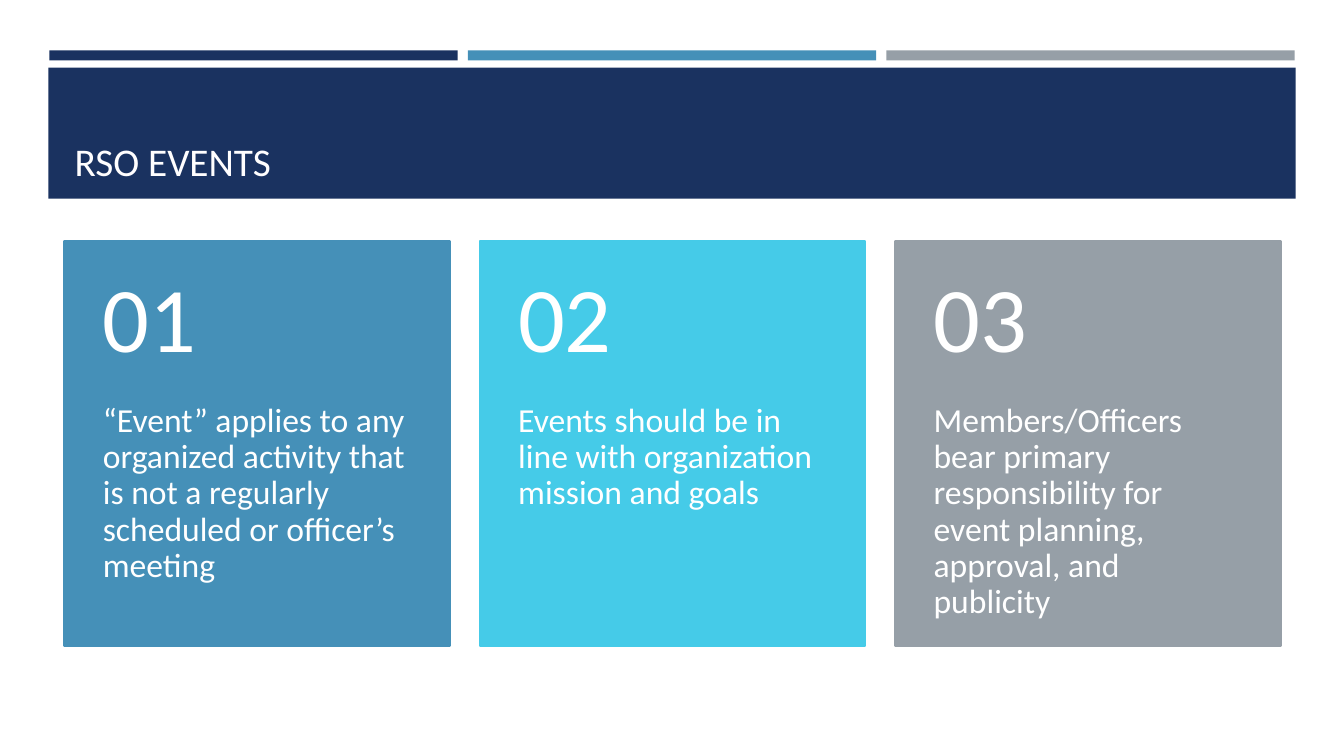
from pptx import Presentation
from pptx.dml.color import RGBColor
from pptx.enum.shapes import MSO_SHAPE
from pptx.enum.text import MSO_ANCHOR, PP_ALIGN
from pptx.util import Pt

RECT = MSO_SHAPE.RECTANGLE
TOP, MIDDLE, BOTTOM = MSO_ANCHOR.TOP, MSO_ANCHOR.MIDDLE, MSO_ANCHOR.BOTTOM
LEFT = PP_ALIGN.LEFT

NAVY = RGBColor(0x1A, 0x32, 0x60)
BLUE = RGBColor(0x45, 0x90, 0xB8)
CYAN = RGBColor(0x45, 0xCB, 0xE8)
GRAY = RGBColor(0x96, 0x9F, 0xA7)
WHITE = RGBColor(0xFF, 0xFF, 0xFF)
TITLE_WHITE = RGBColor(0xFF, 0xFE, 0xFF)
FONT = "Calibri"

TITLE = "RSO EVENTS"
STRIPES = [NAVY, BLUE, GRAY]
CARDS = [
    ("01", "“Event” applies to any organized activity that is not a regularly "
           "scheduled or officer’s meeting", BLUE),
    ("02", "Events should be in line with organization mission and goals", CYAN),
    ("03", "Members/Officers bear primary responsibility for event planning, "
           "approval, and publicity", GRAY),
]

PX = 9144  # EMU per px, 100 px to the inch
SLIDE_W, SLIDE_H = 1333, 750
STRIPE_X, STRIPE_Y, STRIPE_W, STRIPE_H, STRIPE_STEP = 49, 50, 405, 10, 415
BANNER = (48, 67, 1237, 130)
TITLE_BOX = (64, 77, 1206, 111)
CARD_X, CARD_Y, CARD_W, CARD_H, CARD_STEP = 64, 239, 382, 402, 412
NUMBER_H = 161
NUMBER_INSETS = (38, 18, 38, 18)
BODY_INSETS = (38, 0, 38, 36)


def emu(values):
    return [v * PX for v in values]


def add_rect(s, box, color, line_width=None):
    sp = s.shapes.add_shape(RECT, *emu(box))
    sp.shadow.inherit = False
    sp.fill.solid()
    sp.fill.fore_color.rgb = color
    if line_width:
        sp.line.color.rgb = color
        sp.line.width = Pt(line_width)
    else:
        sp.line.fill.background()


def set_text(sp, text, size, color=WHITE, anchor=TOP, insets=(10, 5, 10, 5),
             spacing=0.9):
    tf = sp.text_frame
    tf.word_wrap = True
    tf.vertical_anchor = anchor
    (tf.margin_left, tf.margin_top,
     tf.margin_right, tf.margin_bottom) = emu(insets)
    p = tf.paragraphs[0]
    p.alignment = LEFT
    p.line_spacing = spacing
    r = p.add_run()
    r.text = text
    r.font.name = FONT
    r.font.size = Pt(size)
    r.font.color.rgb = color


def add_text(s, box, text, size, **fmt):
    set_text(s.shapes.add_textbox(*emu(box)), text, size, **fmt)


def main():
    prs = Presentation()
    prs.slide_width, prs.slide_height = emu((SLIDE_W, SLIDE_H))
    s = prs.slides.add_slide(prs.slide_layouts[5])

    for i, color in enumerate(STRIPES):
        x = STRIPE_X + i * STRIPE_STEP
        add_rect(s, (x, STRIPE_Y, STRIPE_W, STRIPE_H), color)
    add_rect(s, BANNER, NAVY)

    title = s.shapes.title
    title.left, title.top, title.width, title.height = emu(TITLE_BOX)
    set_text(title, TITLE, 28, color=TITLE_WHITE, anchor=BOTTOM, spacing=1.0)
    # Later shapes would cover the title, so it moves above the banner.
    s.shapes._spTree.append(title._element)

    for i, (number, body, color) in enumerate(CARDS):
        x = CARD_X + i * CARD_STEP
        add_rect(s, (x, CARD_Y, CARD_W, CARD_H), color, line_width=1.75)
        add_text(s, (x, CARD_Y + NUMBER_H, CARD_W, CARD_H - NUMBER_H), body, 24,
                 insets=BODY_INSETS)
        add_text(s, (x, CARD_Y, CARD_W, NUMBER_H), number, 66,
                 anchor=MIDDLE, insets=NUMBER_INSETS)

    prs.save("out.pptx")


if __name__ == "__main__":
    main()
